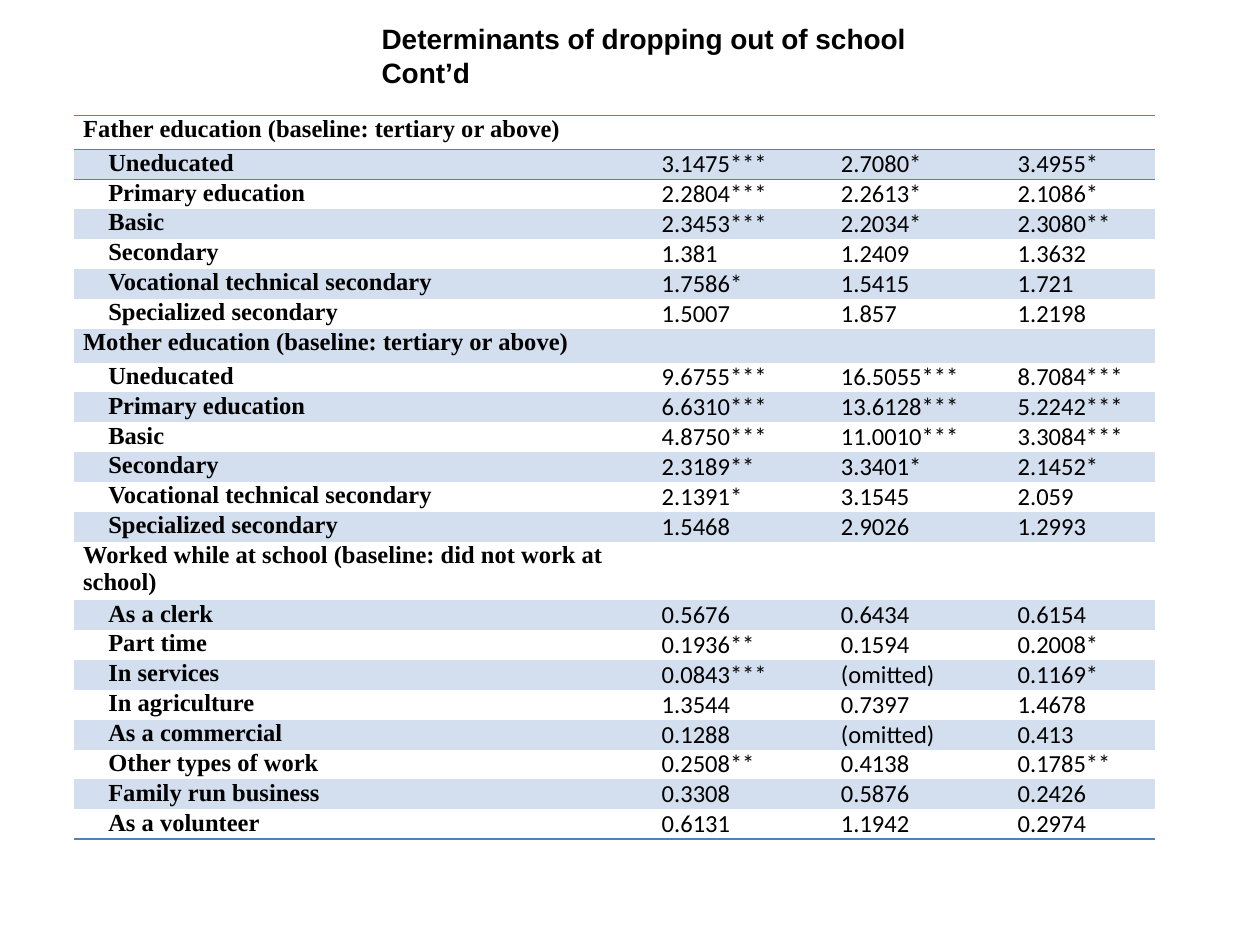
"""Build the slide with the determinants of dropping out of school."""
import lxml.etree
import pptx
import pptx.dml.color
import pptx.enum.text
import pptx.oxml.ns
import pptx.util

Pt = pptx.util.Pt
BLACK = pptx.dml.color.RGBColor(0x00, 0x00, 0x00)
BAND = pptx.dml.color.RGBColor(0xD3, 0xDF, 0xEE)
RULE = pptx.dml.color.RGBColor(0x4F, 0x81, 0xBD)
NO_STYLE = "{2D5ABB26-0587-4C30-8999-92F81FD0307C}"

TITLE = ["Determinants of dropping out of school", "Cont’d"]
SECTIONS = [
    ("Father education (baseline: tertiary or above)", 19.4, [
        ("Uneducated", "3.1475***", "2.7080*", "3.4955*"),
        ("Primary education", "2.2804***", "2.2613*", "2.1086*"),
        ("Basic", "2.3453***", "2.2034*", "2.3080**"),
        ("Secondary", "1.381", "1.2409", "1.3632"),
        ("Vocational technical secondary", "1.7586*", "1.5415", "1.721"),
        ("Specialized secondary", "1.5007", "1.857", "1.2198"),
    ]),
    ("Mother education (baseline: tertiary or above)", 19.4, [
        ("Uneducated", "9.6755***", "16.5055***", "8.7084***"),
        ("Primary education", "6.6310***", "13.6128***", "5.2242***"),
        ("Basic", "4.8750***", "11.0010***", "3.3084***"),
        ("Secondary", "2.3189**", "3.3401*", "2.1452*"),
        ("Vocational technical secondary", "2.1391*", "3.1545", "2.059"),
        ("Specialized secondary", "1.5468", "2.9026", "1.2993"),
    ]),
    ("Worked while at school (baseline: did not work at school)", 33.5, [
        ("As a clerk", "0.5676", "0.6434", "0.6154"),
        ("Part time", "0.1936**", "0.1594", "0.2008*"),
        ("In services", "0.0843***", "(omitted)", "0.1169*"),
        ("In agriculture", "1.3544", "0.7397", "1.4678"),
        ("As a commercial", "0.1288", "(omitted)", "0.413"),
        ("Other types of work", "0.2508**", "0.4138", "0.1785**"),
        ("Family run business", "0.3308", "0.5876", "0.2426"),
        ("As a volunteer", "0.6131", "1.1942", "0.2974"),
    ]),
]
COLUMN_WIDTHS = [314.9, 102.4, 101, 99.5]
ROW_HEIGHT = 16.8
LABEL_INDENT, VALUE_INDENT, TITLE_INDENT = 14.4, 15.8, 20.2


def set_text(paragraph, text, font_name, size, bold, indent=0):
    paragraph.text = text
    paragraph.font.name = font_name
    paragraph.font.size = Pt(size)
    paragraph.font.bold = bold
    paragraph.font.color.rgb = BLACK
    properties = paragraph._p.get_or_add_pPr()
    properties.set("marL", "0")
    properties.set("indent", str(Pt(indent)))


def add_border(cell, side):
    qn = pptx.oxml.ns.qn
    line = lxml.etree.SubElement(cell._tc.get_or_add_tcPr(), qn(f"a:{side}"), w=str(Pt(1)))
    fill = lxml.etree.SubElement(line, qn("a:solidFill"))
    lxml.etree.SubElement(fill, qn("a:srgbClr"), val=str(RULE))


def fill_cell(cell, text, is_label, is_heading, banded, sides):
    cell.margin_left = cell.margin_right = Pt(5.2)
    cell.margin_top = cell.margin_bottom = Pt(0)
    paragraph = cell.text_frame.paragraphs[0]
    if not text:
        paragraph._p.get_or_add_endParaRPr().set("sz", "1000")
    elif is_label:
        indent = 0 if is_heading else LABEL_INDENT
        set_text(paragraph, text, "Times New Roman", 14, True, indent)
    else:
        set_text(paragraph, text, "Calibri", 14, False, VALUE_INDENT)
    for side in sides:
        add_border(cell, side)
    if banded:
        cell.fill.solid()
        cell.fill.fore_color.rgb = BAND
    else:
        cell.fill.background()


def add_results_table(slide):
    rows = []
    for heading, height, records in SECTIONS:
        rows.append((height, (heading, "", "", ""), True))
        rows += [(ROW_HEIGHT, record, False) for record in records]
    total_height = sum(height for height, _, _ in rows)
    table = slide.shapes.add_table(
        len(rows), len(COLUMN_WIDTHS), Pt(42.3), Pt(66),
        Pt(sum(COLUMN_WIDTHS)), Pt(total_height)).table
    table.first_row = table.horz_banding = False
    table._tbl.tblPr.find(pptx.oxml.ns.qn("a:tableStyleId")).text = NO_STYLE
    for column, width in zip(table.columns, COLUMN_WIDTHS):
        column.width = Pt(width)
    borders = {0: ("lnT", "lnB"), 1: ("lnT",), len(rows) - 1: ("lnB",)}
    for row_index, (height, texts, is_heading) in enumerate(rows):
        table.rows[row_index].height = Pt(height)
        for column_index, text in enumerate(texts):
            fill_cell(table.cell(row_index, column_index), text, column_index == 0,
                      is_heading, row_index % 2 == 1, borders.get(row_index, ()))


def add_title(slide):
    frame = slide.shapes.add_textbox(Pt(190.8), Pt(8.6), Pt(338.4), Pt(46)).text_frame
    frame.word_wrap = False
    frame.auto_size = pptx.enum.text.MSO_AUTO_SIZE.SHAPE_TO_FIT_TEXT
    frame.vertical_anchor = pptx.enum.text.MSO_ANCHOR.MIDDLE
    for index, text in enumerate(TITLE):
        paragraph = frame.add_paragraph() if index else frame.paragraphs[0]
        set_text(paragraph, text, "Arial", 16, True, TITLE_INDENT)
        paragraph.alignment = pptx.enum.text.PP_ALIGN.JUSTIFY


def main():
    presentation = pptx.Presentation()
    presentation.slide_width, presentation.slide_height = Pt(720), Pt(540)
    slide = presentation.slides.add_slide(presentation.slide_layouts[6])
    add_results_table(slide)
    add_title(slide)
    presentation.save("out.pptx")


if __name__ == "__main__":
    main()
